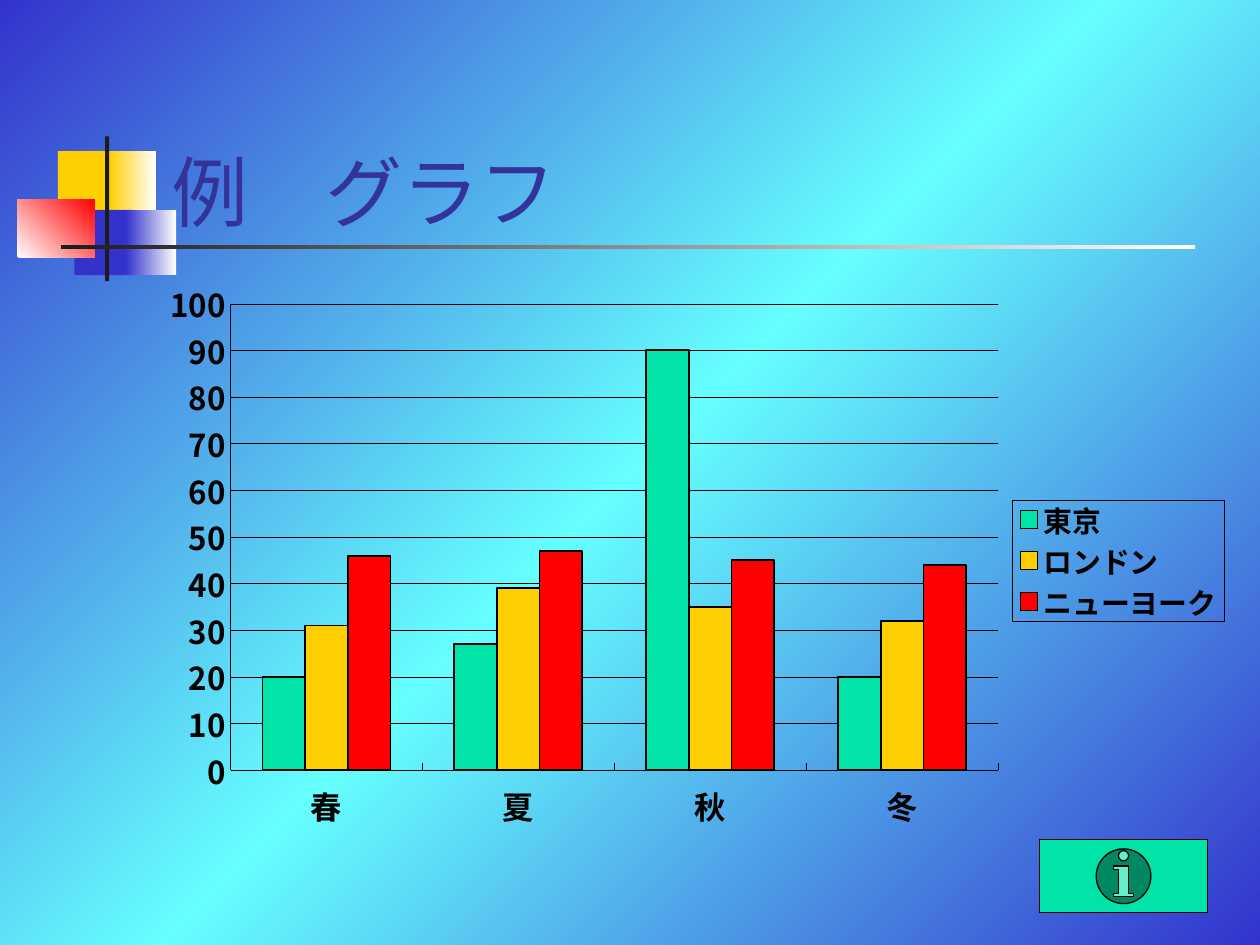
import copy

import pptx
import pptx.chart.data
import pptx.dml.color
import pptx.enum.chart
import pptx.enum.shapes
import pptx.enum.text
import pptx.oxml
import pptx.oxml.ns
import pptx.util
from pptx.util import Cm, Pt

RGBColor = pptx.dml.color.RGBColor
BLUE = RGBColor(0x33, 0x33, 0xCC)
CYAN = RGBColor(0x66, 0xFF, 0xFF)
YELLOW = RGBColor(0xFF, 0xCF, 0x01)
RED = RGBColor(0xFF, 0x00, 0x00)
GREEN = RGBColor(0x00, 0xE4, 0xA8)
WHITE = RGBColor(0xFF, 0xFF, 0xFF)
CHARCOAL = RGBColor(0x1C, 0x1C, 0x1C)
BLACK = RGBColor(0x00, 0x00, 0x00)
TITLE_BLUE = RGBColor(0x33, 0x33, 0x99)
CHART_FONT = "Noto Sans CJK JP"
CHART_WIDTH = 21.31
CHART_HEIGHT = 11.15


def set_gradient(fill, start, end, angle):
    """Fill from start to end; the angle runs counter-clockwise."""
    fill.gradient()
    fill.gradient_angle = angle
    for stop, color, position in zip(fill.gradient_stops, (start, end), (0, 1)):
        stop.color.rgb = color
        stop.position = position


def add_layout(parent, index, target, left, top, width, height):
    """Place a chart part, in centimetres from the chart's corner."""
    for old in parent.findall(pptx.oxml.ns.qn("c:layout")):
        parent.remove(old)
    parent.insert(index, pptx.oxml.parse_xml(
        f'<c:layout {pptx.oxml.ns.nsdecls("c")}><c:manualLayout>{target}'
        '<c:xMode val="edge"/><c:yMode val="edge"/>'
        f'<c:x val="{left / CHART_WIDTH}"/><c:y val="{top / CHART_HEIGHT}"/>'
        f'<c:w val="{width / CHART_WIDTH}"/><c:h val="{height / CHART_HEIGHT}"/>'
        '</c:manualLayout></c:layout>'))


presentation = pptx.Presentation()
presentation.slide_width = Cm(25.4)
presentation.slide_height = Cm(19.05)
slide = presentation.slides.add_slide(presentation.slide_layouts[6])

# Background: blue, cyan in the middle, blue again
set_gradient(slide.background.fill, BLUE, BLUE, 315)
stop_list = slide.element.find(".//" + pptx.oxml.ns.qn("a:gsLst"))
stop_list.insert(1, copy.deepcopy(stop_list[0]))
middle_stop = slide.background.fill.gradient_stops[1]
middle_stop.position = 0.5
middle_stop.color.rgb = CYAN

# Corner ornament: left, top, width, height, start colour, end colour, angle
ornament = [
    (1.17, 3.05, 1.22, 1.32, YELLOW, None, 0),
    (2.2, 3.05, 0.94, 1.32, YELLOW, WHITE, 0),
    (1.5, 4.23, 1.17, 1.32, BLUE, None, 0),
    (2.54, 4.23, 1.01, 1.32, BLUE, WHITE, 0),
    (0.35, 4.02, 1.56, 1.17, WHITE, RED, 45),
    (2.12, 2.75, 0.08, 2.92, CHARCOAL, None, 0),
    (1.23, 4.94, 22.86, 0.09, CHARCOAL, WHITE, 0),
]
for left, top, width, height, start, end, angle in ornament:
    shape = slide.shapes.add_shape(
        pptx.enum.shapes.MSO_SHAPE.RECTANGLE, Cm(left), Cm(top), Cm(width), Cm(height))
    shape.shadow.inherit = False
    shape.line.fill.background()
    if end is None:
        shape.fill.solid()
        shape.fill.fore_color.rgb = start
    else:
        set_gradient(shape.fill, start, end, angle)

# Title
title = slide.shapes.add_textbox(Cm(3.2), Cm(1.72), Cm(21.64), Cm(3.18))
title.text_frame.word_wrap = True
title.text_frame.vertical_anchor = pptx.enum.text.MSO_ANCHOR.BOTTOM
paragraph = title.text_frame.paragraphs[0]
paragraph.text = "例　グラフ"
paragraph.font.name = "Cabin"
paragraph.font.size = Pt(44)
paragraph.font.color.rgb = TITLE_BLUE

# Chart
series_list = [
    ("東京", (20, 27, 90, 20), GREEN),
    ("ロンドン", (31, 39, 35, 32), YELLOW),
    ("ニューヨーク", (46, 47, 45, 44), RED),
]
chart_data = pptx.chart.data.CategoryChartData()
chart_data.categories = ["春", "夏", "秋", "冬"]
for name, values, _ in series_list:
    chart_data.add_series(name, values)
chart = slide.shapes.add_chart(
    pptx.enum.chart.XL_CHART_TYPE.COLUMN_CLUSTERED,
    Cm(3.43), Cm(5.66), Cm(CHART_WIDTH), Cm(CHART_HEIGHT), chart_data).chart
chart.has_title = False
chart.has_legend = True
legend = chart.legend
legend.position = pptx.enum.chart.XL_LEGEND_POSITION.RIGHT
legend.include_in_layout = False
for font, size in ((chart.font, 18), (legend.font, 16.6)):
    font.name = CHART_FONT
    font.size = Pt(size)
    font.bold = True
    font.color.rgb = BLACK

plot = chart.plots[0]
plot.gap_width = 150
plot.overlap = 0
plot.vary_by_categories = False
for series, (_, _, color) in zip(plot.series, series_list):
    series.format.fill.solid()
    series.format.fill.fore_color.rgb = color
    series.format.line.color.rgb = BLACK
    series.format.line.width = Pt(1)

value_axis = chart.value_axis
value_axis.minimum_scale = 0
value_axis.maximum_scale = 100
value_axis.major_unit = 10
value_axis.has_major_gridlines = True
chart.category_axis.tick_label_position = pptx.enum.chart.XL_TICK_LABEL_POSITION.LOW
for axis in (chart.category_axis, value_axis):
    axis.major_tick_mark = pptx.enum.chart.XL_TICK_MARK.INSIDE
for part in (chart.category_axis, value_axis, value_axis.major_gridlines):
    part.format.line.color.rgb = BLACK
    part.format.line.width = Pt(0.25)

# Plot area and framed legend
plot_area = chart.element.find(".//" + pptx.oxml.ns.qn("c:plotArea"))
legend_element = chart.element.find(".//" + pptx.oxml.ns.qn("c:legend"))
add_layout(plot_area, 0, '<c:layoutTarget val="inner"/>', 1.08, 0.46, 15.58, 9.41)
add_layout(legend_element, 1, "", 16.95, 4.39, 4.29, 2.45)
legend_text = legend_element.find(pptx.oxml.ns.qn("c:txPr"))
legend_text.addprevious(pptx.oxml.parse_xml(
    f'<c:spPr {pptx.oxml.ns.nsdecls("c", "a")}><a:noFill/><a:ln w="3175">'
    f'<a:solidFill><a:srgbClr val="{BLACK}"/></a:solidFill></a:ln></c:spPr>'))

# Information button
button = slide.shapes.add_shape(
    pptx.enum.shapes.MSO_SHAPE.ACTION_BUTTON_INFORMATION,
    Cm(20.96), Cm(16.93), Cm(3.38), Cm(1.47))
button.shadow.inherit = False
button.fill.solid()
button.fill.fore_color.rgb = GREEN
button.line.color.rgb = BLACK
button.line.width = Pt(0.75)

presentation.save("out.pptx")
